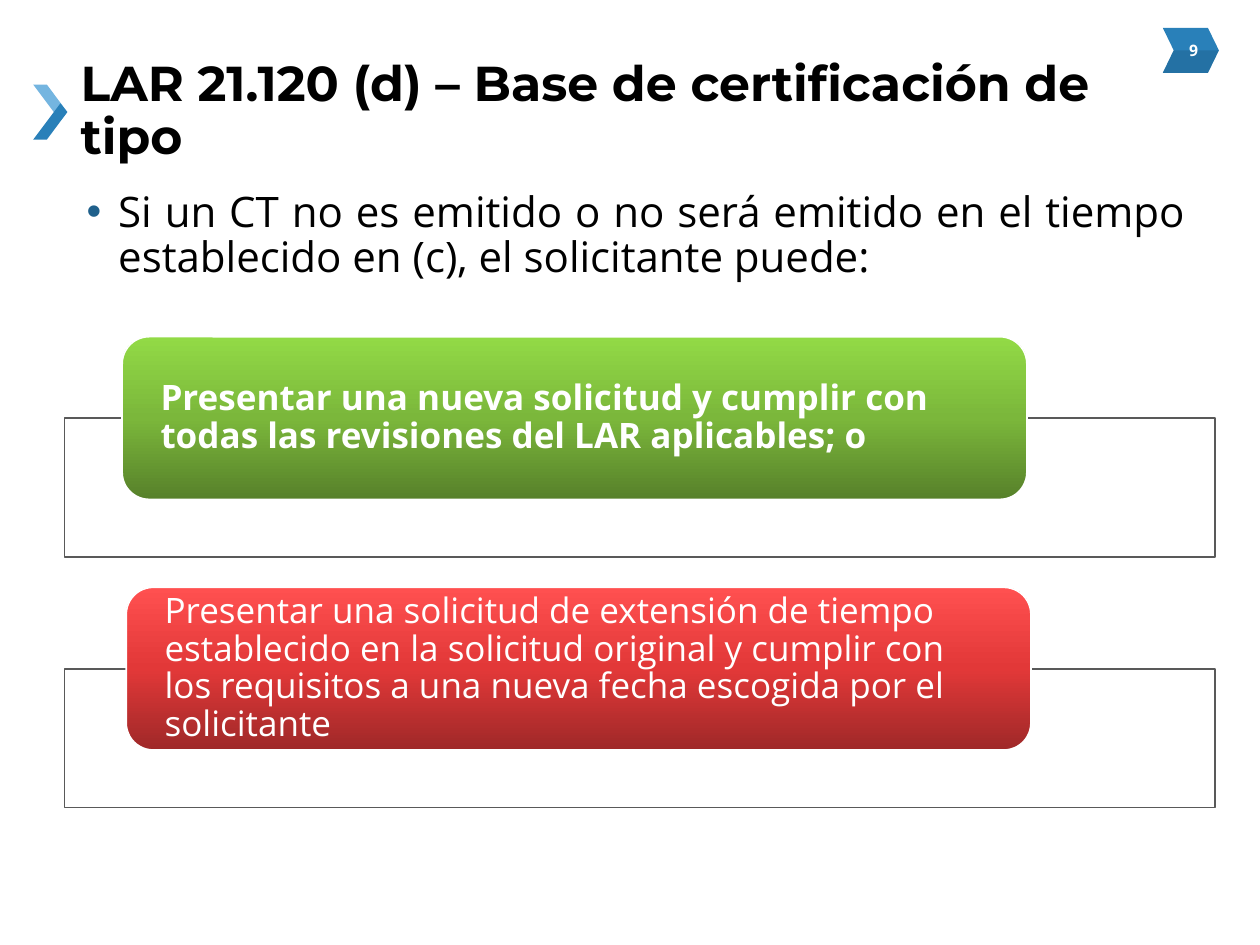
import pptx
import pptx.util
import pptx.dml.color
import pptx.enum.shapes
import pptx.enum.text
import pptx.oxml
import pptx.oxml.ns

Pt = pptx.util.Pt
SHAPE = pptx.enum.shapes.MSO_SHAPE
ALIGN = pptx.enum.text.PP_ALIGN
ANCHOR = pptx.enum.text.MSO_ANCHOR
NS = pptx.oxml.ns.nsdecls("a")


def color(value):
    """Turn a hex string into an RGB colour."""
    return pptx.dml.color.RGBColor.from_string(value)


def paint(sp, fill, line=None, alpha=None):
    """Give a shape a solid fill with optional opacity, and a 1 pt outline or none."""
    sp.shadow.inherit = False
    sp.fill.solid()
    sp.fill.fore_color.rgb = color(fill)
    if alpha is not None:
        clr = sp._element.spPr.find(".//" + pptx.oxml.ns.qn("a:srgbClr"))
        clr.append(pptx.oxml.parse_xml(f'<a:alpha {NS} val="{alpha * 1000}"/>'))
    if line:
        sp.line.color.rgb = color(line)
        sp.line.width = Pt(1)
    else:
        sp.line.fill.background()


def paint_gradient(sp, stops):
    """Replace the fill with three evenly spaced colours rising from the bottom."""
    gs = "".join(f'<a:gs pos="{i * 50000}"><a:srgbClr val="{c}"/></a:gs>'
                 for i, c in enumerate(stops))
    grad = pptx.oxml.parse_xml(
        f'<a:gradFill {NS} rotWithShape="1"><a:gsLst>{gs}</a:gsLst>'
        '<a:lin ang="16200000" scaled="0"/></a:gradFill>')
    spPr = sp._element.spPr
    spPr.replace(spPr.find(pptx.oxml.ns.qn("a:solidFill")), grad)


def add_shape(s, kind, x, y, w, h):
    """Add a preset shape measured in points."""
    return s.shapes.add_shape(kind, Pt(x), Pt(y), Pt(w), Pt(h))


def add_outline(s, x, y, points, fill, alpha=None):
    """Draw a closed polygon whose points are offsets from x, y."""
    pts = [(Pt(x + dx), Pt(y + dy)) for dx, dy in points]
    builder = s.shapes.build_freeform(*pts[0], scale=1.0)
    builder.add_line_segments(pts[1:], close=True)
    paint(builder.convert_to_shape(), fill, alpha=alpha)


def write(sp, text, size, font, fill, bold=False, align=ALIGN.LEFT,
          anchor=ANCHOR.MIDDLE, spacing=0.9, inset=(7.2, 3.6)):
    """Write one formatted paragraph in a shape and return it."""
    tf = sp.text_frame
    tf.text = text
    tf.word_wrap = True
    tf.vertical_anchor = anchor
    tf.margin_left = tf.margin_right = Pt(inset[0])
    tf.margin_top = tf.margin_bottom = Pt(inset[1])
    p = tf.paragraphs[0]
    p.alignment = align
    p.line_spacing = spacing
    r = p.runs[0]
    r.font.size = Pt(size)
    r.font.name = font
    r.font.bold = bold
    r.font.color.rgb = color(fill)
    return p


def add_text(s, x, y, w, h, text, *style, **options):
    """Add a text box with one formatted paragraph."""
    sp = s.shapes.add_textbox(Pt(x), Pt(y), Pt(w), Pt(h))
    return write(sp, text, *style, **options)


def add_page_badge(s, x, y, w, h, number):
    """Draw the page number on a two-tone chevron."""
    sp = add_shape(s, SHAPE.CHEVRON, x, y, w, h)
    sp.adjustments[0] = 0.243
    paint(sp, "2980B9")
    notch = 0.243 * h
    add_outline(s, x, y, [(notch, h / 2), (w, h / 2), (w - notch, h), (0, h)],
                "1F608B", alpha=45)
    add_text(s, x - 1.4, y + 2.2, 38, 21.6, number, 9, "Open Sans", "FFFFFF",
             bold=True, align=ALIGN.CENTER, spacing=1.0)


def add_title(s, x, y, w, h, text):
    """Draw the arrow mark and the title beside it."""
    mark_w, mark_h, mark_y = 19.5, 31.5, y + 19.5
    arm = [(0, 0), (0.8, 0.66), (1, 0.5), (0.4, 0)]
    for fill, flip in (("74B5E0", False), ("2980B9", True)):
        add_outline(s, x, mark_y, [(px * mark_w, (1 - py if flip else py) * mark_h)
                                   for px, py in arm], fill)
    add_text(s, x + 20, y, w - 20, h, text, 28, "Montserrat", "000000", bold=True)


def add_bullet(s, x, y, w, h, text):
    """Add a justified paragraph with a coloured bullet."""
    p = add_text(s, x, y, w, h, text, 24, "Open Sans", "000000",
                 align=ALIGN.JUSTIFY, anchor=ANCHOR.TOP)
    p.space_before = Pt(10)
    pPr = p._p.get_or_add_pPr()
    pPr.set("marL", str(Pt(18)))
    pPr.set("indent", str(-Pt(18)))
    for xml in (f'<a:buClr {NS}><a:srgbClr val="1F608B"/></a:buClr>',
                f'<a:buFont {NS} typeface="Arial"/>',
                f'<a:buChar {NS} char="•"/>'):
        pPr.append(pptx.oxml.parse_xml(xml))


def add_option(s, x, y, w, h, indent, text, stops, bold):
    """Draw a framed option with a rounded label over its top edge."""
    label_h = 93
    frame_y = y + label_h / 2
    frame = add_shape(s, SHAPE.RECTANGLE, x, frame_y, w, y + h - frame_y)
    paint(frame, "FFFFFF", "595959", alpha=90)
    label = add_shape(s, SHAPE.ROUNDED_RECTANGLE, x + indent, y, 517, label_h)
    paint(label, "FFFFFF", "FFFFFF")
    paint_gradient(label, stops)
    write(label, text, 20, "Open Sans", "FFFFFF", bold=bold, inset=(17.4, 0))


def main():
    """Build and save the slide."""
    prs = pptx.Presentation()
    prs.slide_width, prs.slide_height = Pt(720), Pt(540)
    s = prs.slides.add_slide(prs.slide_layouts[6])
    add_page_badge(s, 664.5, 16, 32, 25.6, "9")
    add_title(s, 19, 28.8, 640.5, 70.6,
              "LAR 21.120 (d) – Base de certificación de tipo")
    add_bullet(s, 42.5, 105.8, 642, 79,
               "Si un CT no es emitido o no será emitido en el tiempo "
               "establecido en (c), el solicitante puede:")
    options = [
        (33, "Presentar una nueva solicitud y cumplir con todas las revisiones "
             "del LAR aplicables; o", ("57812A", "7BB73B", "92DA46"), True),
        (35.3, "Presentar una solicitud de extensión de tiempo establecido en la "
               "solicitud original y cumplir con los requisitos a una nueva fecha "
               "escogida por el solicitante", ("9F2828", "E23838", "FF5050"), False),
    ]
    for i, option in enumerate(options):
        add_option(s, 36.8, 192.4 + 143.2 * i, 657.5, 125.8, *option)
    prs.save("out.pptx")


if __name__ == "__main__":
    main()
